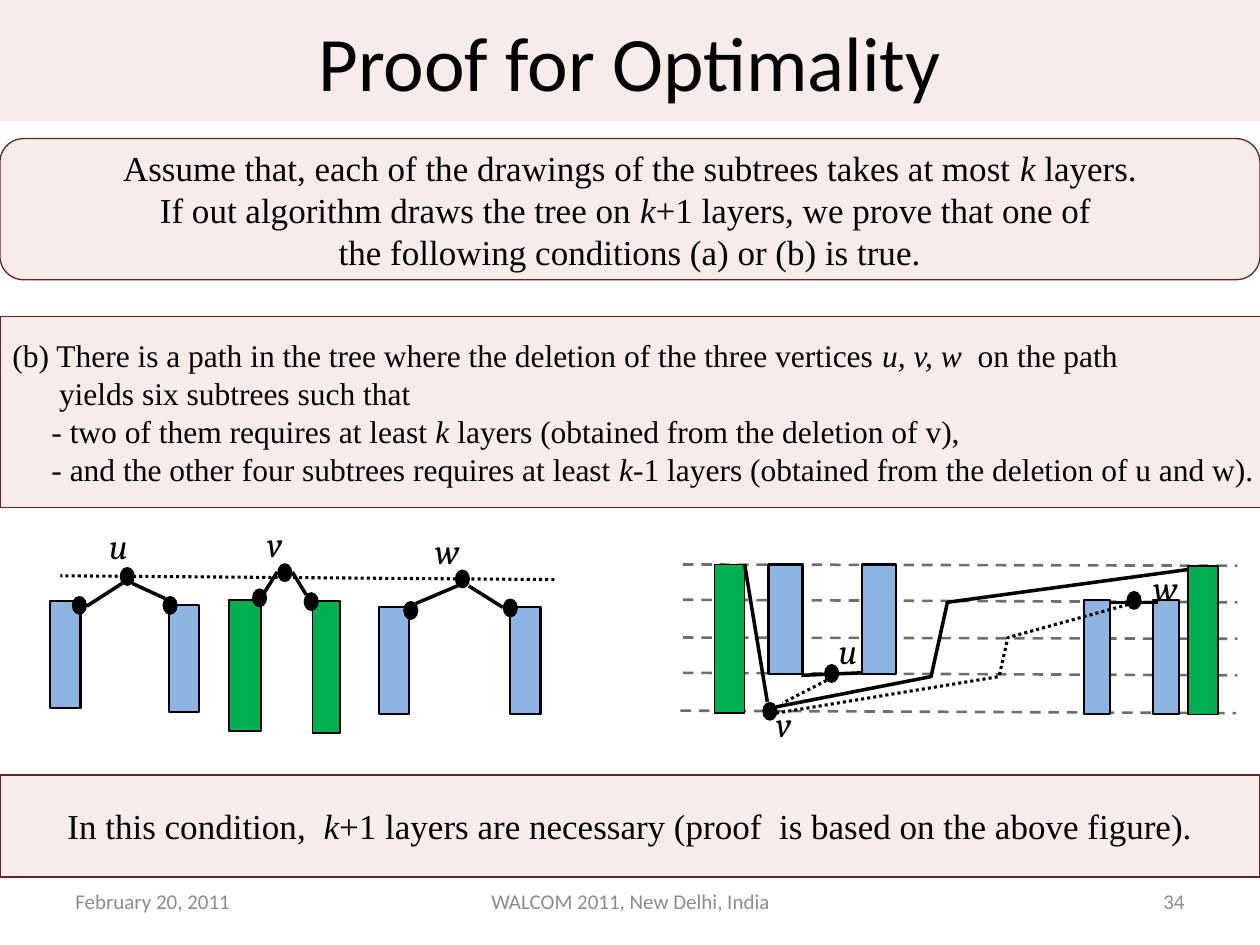
from pptx import Presentation
from pptx.util import Inches, Pt
from pptx.dml.color import RGBColor
from pptx.enum.dml import MSO_LINE
from pptx.enum.shapes import MSO_CONNECTOR, MSO_SHAPE
from pptx.enum.text import MSO_ANCHOR, PP_ALIGN
from pptx.oxml.ns import qn
from lxml import etree

# Content
COLORS = {"ink": "000000", "grey": "8C8C8C", "pink": "E6B9B8", "edge": "632523",
          "blue": "8EB4E3", "green": "00B050"}
SERIF, SANS, MATH = "Times New Roman", "Calibri", "Cambria"
LEFT, MID, RIGHT = PP_ALIGN.LEFT, PP_ALIGN.CENTER, PP_ALIGN.RIGHT
SOLID, DOT, DASH = MSO_LINE.SOLID, MSO_LINE.ROUND_DOT, MSO_LINE.DASH

TITLE = "Proof for Optimality"
# Panels: preset, place, size, align, lines of (indent, runs); every second run is italic
PANELS = [
    (MSO_SHAPE.ROUNDED_RECTANGLE, (0, 1.1, 10, 1.12), 20, MID, [
        (0, ["Assume that, each of the drawings of the subtrees takes at most ", "k ", "layers."]),
        (0, ["If out algorithm draws the tree on ", "k", "+1 layers, we prove that one of "]),
        (0, ["the following conditions (a) or (b) is true."])]),
    (MSO_SHAPE.RECTANGLE, (0, 2.51, 10.22, 1.52), 18, LEFT, [
        (0, ["(b) There is a path in the tree where the deletion of the three vertices",
             " u, v, w", "  on the path"]),
        (0.37, ["yields six subtrees such that"]),
        (0.31, ["- two of them requires at least ", "k ",
                "layers (obtained from the deletion of v),"]),
        (0.31, ["- and the other four subtrees requires at least ", "k",
                "-1 layers (obtained from the deletion of u and w)."])]),
    (MSO_SHAPE.RECTANGLE, (0, 6.15, 10, 0.81), 20, MID, [
        (0, ["In this condition,  ", "k",
             "+1 layers are necessary (proof  is based on the above figure)."])]),
]
FOOTER = [("February 20, 2011", 0.5, 2.33, LEFT),
          ("WALCOM 2011, New Delhi, India", 3.42, 3.17, MID),
          ("34", 7.17, 2.33, RIGHT)]

# Left figure: path with three vertices and six subtrees
PATH = (4.4, 4.6, 0.48, 4.57)
TREE = {
    "edges": [(1.05, 4.63, 1.31, 4.75), (0.97, 4.63, 0.69, 4.81), (2.32, 4.54, 2.43, 4.72),
              (2.2, 4.54, 2.1, 4.7), (3.72, 4.65, 3.99, 4.82), (3.63, 4.65, 3.3, 4.79)],
    "blue": [(0.4, 4.77, 0.24, 0.85), (1.34, 4.8, 0.24, 0.85),
             (3.01, 4.82, 0.24, 0.85), (4.05, 4.82, 0.24, 0.85)],
    "green": [(1.82, 4.76, 0.25, 1.04), (2.48, 4.77, 0.22, 1.05)],
    "dots": [(0.95, 4.5), (2.2, 4.47), (3.61, 4.52), (0.57, 4.73), (1.29, 4.73),
             (2, 4.67), (2.41, 4.7), (3.2, 4.77), (3.99, 4.75)],
    "names": [("u", 0.69, 4.04), ("v", 1.93, 4.02), ("w", 3.3, 4.08)],
}
# Right figure: the same tree drawn on five layers
LAYERS = [(5.42, 4.48, 9.82, 4.49), (5.42, 4.76, 9.82, 4.78), (5.42, 5.06, 9.82, 5.07),
          (5.42, 5.34, 9.82, 5.36), (5.4, 5.64, 9.81, 5.66)]
LAYOUT = {
    "edges": [(5.91, 4.48, 6.09, 5.57), (6.36, 5.36, 6.84, 5.34), (8.81, 4.78, 9.19, 4.78)],
    "blue": [(6.1, 4.48, 0.27, 0.87), (6.84, 4.48, 0.27, 0.87),
             (8.6, 4.76, 0.21, 0.91), (9.15, 4.76, 0.21, 0.91)],
    "green": [(5.67, 4.48, 0.24, 1.18), (9.43, 4.49, 0.24, 1.18)],
    "dots": [(6.05, 5.57), (6.54, 5.27), (8.94, 4.69)],
    "names": [("u", 6.48, 4.87), ("v", 5.97, 5.45), ("w", 9, 4.37)],
}
SHORT = (6.56, 5.4, 6.21, 5.58)
BENDS = [([(6.16, 5.66), (7.93, 5.37), (8, 5.06), (9.02, 4.78)], 1.75, DOT),
         ([(6.16, 5.61), (7.39, 5.37), (7.52, 4.78), (9.43, 4.52)], 2, SOLID)]

deck = Presentation()
deck.slide_width, deck.slide_height = Inches(10), Inches(7.5)
slide = deck.slides.add_slide(deck.slide_layouts[5])
shapes = slide.shapes


def rgb(name):
    return RGBColor.from_string(COLORS[name])


def fade(color, share):
    tag = color.find(".//" + qn("a:srgbClr"))
    etree.SubElement(tag, qn("a:alpha"), val=str(share * 1000))


def paint(shape, fill, edge=None, width=1.0, share=None):
    shape.fill.solid()
    shape.fill.fore_color.rgb = rgb(fill)
    if share:
        fade(shape._element.spPr.find(qn("a:solidFill")), share)
    if edge:
        shape.line.color.rgb = rgb(edge)
        shape.line.width = Pt(width)
    else:
        shape.line.fill.background()


def block(kind, place, fill, *style):
    shape = shapes.add_shape(kind, *map(Inches, place))
    shape.shadow.inherit = False
    paint(shape, fill, *style)
    return shape


def write(para, text, size, font, color="ink", slant=False, align=MID):
    para.alignment = align
    run = para.add_run()
    run.text = text
    run.font.size, run.font.name, run.font.italic = Pt(size), font, slant
    run.font.color.rgb = rgb(color)


def label(text, place, size, font, wrap=True, **style):
    frame = shapes.add_textbox(*map(Inches, place)).text_frame
    frame.word_wrap = wrap
    frame.vertical_anchor = MSO_ANCHOR.MIDDLE
    write(frame.paragraphs[0], text, size, font, **style)


def stroke(shape, width, dash, share=None):
    shape.line.color.rgb = rgb("ink")
    shape.line.width = Pt(width)
    shape.line.dash_style = dash
    if share:
        fade(shape.line._ln, share)


def line(ends, width=2, dash=SOLID, share=None):
    link = shapes.add_connector(MSO_CONNECTOR.STRAIGHT, *map(Inches, ends))
    stroke(link, width, dash, share)
    etree.SubElement(link._element.spPr, qn("a:effectLst"))


def bend(points, width, dash):
    start, *rest = [(Inches(x), Inches(y)) for x, y in points]
    pen = shapes.build_freeform(*start)
    pen.add_line_segments(rest, close=False)
    shape = pen.convert_to_shape()
    shape.shadow.inherit = False
    shape.fill.background()
    stroke(shape, width, dash)


def bars(part):
    for name, width in (("blue", 1.25), ("green", 1)):
        for place in part[name]:
            block(MSO_SHAPE.RECTANGLE, place, name, "ink", width)


def dots(part):
    for x, y in part["dots"]:
        block(MSO_SHAPE.OVAL, (x, y, 0.12, 0.15), "ink")


def edges(part):
    for ends in part["edges"]:
        line(ends)


def names(part):
    for text, x, y in part["names"]:
        label(text, (x, y, 0.5, 0.58), 20, MATH, wrap=False, slant=True)


# Title band
title = shapes.title
title.left, title.top, title.width, title.height = map(Inches, (0, 0, 10, 0.96))
paint(title, "pink", share=27)
title.text_frame.vertical_anchor = MSO_ANCHOR.MIDDLE
write(title.text_frame.paragraphs[0], TITLE, 44, SANS)

# Statement panels
for kind, place, size, align, rows in PANELS:
    frame = block(kind, place, "pink", "edge", 0.75, 27).text_frame
    frame.word_wrap = True
    frame.vertical_anchor = MSO_ANCHOR.MIDDLE
    for i, (indent, runs) in enumerate(rows):
        para = frame.add_paragraph() if i else frame.paragraphs[0]
        para._p.get_or_add_pPr().set("marL", str(Inches(indent)))
        for j, text in enumerate(runs):
            write(para, text, size, SERIF, slant=j % 2 == 1, align=align)

# Left figure
line(PATH, 1.75, DOT)
edges(TREE)
bars(TREE)
dots(TREE)
names(TREE)

# Right figure
for ends in LAYERS:
    line(ends, 1.5, DASH, 56)
bars(LAYOUT)
dots(LAYOUT)
edges(LAYOUT)
line(SHORT, 1.75, DOT)
for points, width, dash in BENDS:
    bend(points, width, dash)
names(LAYOUT)

# Footer
for text, x, width, align in FOOTER:
    label(text, (x, 6.95, width, 0.4), 12, SANS, color="grey", align=align)

deck.save("out.pptx")
